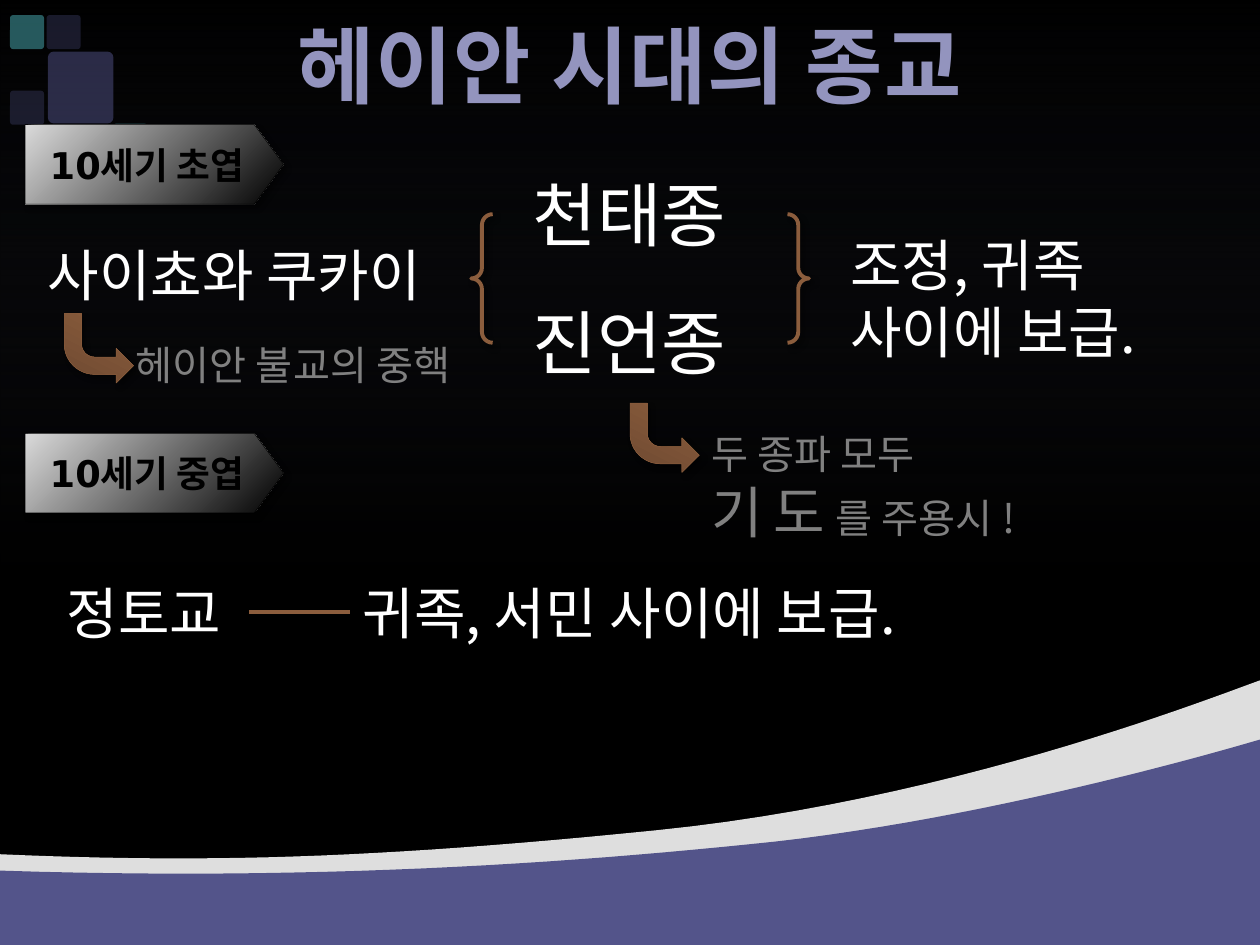
from lxml.etree import SubElement
from pptx import Presentation
from pptx.dml.color import RGBColor
from pptx.enum.shapes import MSO_CONNECTOR, MSO_SHAPE
from pptx.enum.text import MSO_ANCHOR, MSO_AUTO_SIZE, PP_ALIGN
from pptx.oxml.ns import qn
from pptx.util import Inches, Pt

COLORS = {name: RGBColor.from_string(value) for name, value in {
    "black": "000000", "white": "FFFFFF", "gray": "808080", "slate": "424456",
    "silver": "DEDEDE", "light": "DADADA", "indigo": "53548A", "teal": "3F949A",
    "lavender": "9394BE", "brown": "8B5D3D", "dark brown": "6F4A31",
}.items()}
KOREAN_FONT = "Noto Sans CJK KR"


def add_span(para, text, size, color, font=KOREAN_FONT, bold=False, spacing=0):
    span = para.add_run()
    span.text = text
    for name, value in {"size": Pt(size), "bold": bold, "name": font}.items():
        setattr(span.font, name, value)
    span.font.color.rgb = COLORS[color]
    properties = span._r.get_or_add_rPr()
    properties.set("spc", str(int(spacing * 100)))
    SubElement(properties, qn("a:ea"), typeface=KOREAN_FONT)


def add_shadow(shape, opacity):
    """Add a soft shadow; call after fill and line are set."""
    effects = SubElement(shape._element.spPr, qn("a:effectLst"))
    outer = SubElement(effects, qn("a:outerShdw"), blurRad=str(Pt(3)), dist=str(Pt(3)),
                       dir=str(50 * 60000), algn="tl", rotWithShape="0")
    color = SubElement(outer, qn("a:srgbClr"), val="000000")
    SubElement(color, qn("a:alpha"), val=str(opacity * 1000))


deck = Presentation()
deck.slide_width, deck.slide_height = Inches(10), Inches(7.5)
page = deck.slides.add_slide(deck.slide_layouts[5])
page.background.fill.solid()
page.background.fill.fore_color.rgb = COLORS["black"]

# Backdrop glow
glow = page.shapes.add_shape(MSO_SHAPE.RECTANGLE, 0, 0, deck.slide_width, deck.slide_height)
glow.shadow.inherit = False
glow.line.fill.background()
glow.fill.gradient()
glow.fill.gradient_angle = 270
for stop, color, position in zip(glow.fill.gradient_stops, ("slate", "black"), (0, 0.61)):
    stop.color.rgb = COLORS[color]
    stop.position = position
for color, opacity in zip(glow._element.spPr.iter(qn("a:srgbClr")), (0, 40)):
    SubElement(color, qn("a:alpha"), val=str(opacity * 1000))

# Waves: start point, then Bezier segments of two controls and an end point
waves = [
    ("silver", (0, 6.78), [((1.61, 6.85), (2.93, 6.82), (5.21, 6.59)),
                           ((7.49, 6.36), (9.48, 5.59), (10, 5.4))]),
    ("indigo", (0, 6.91), [((2.46, 6.99), (4.45, 6.86), (6.15, 6.68)),
                           ((7.84, 6.49), (9.59, 5.99), (10, 5.87))]),
]
STEPS = 24
for color, start, segments in waves:
    builder = page.shapes.build_freeform(Inches(start[0]), Inches(start[1]))
    points, begin = [], start
    for first, second, end in segments:
        for step in range(1, STEPS + 1):
            t = step / STEPS
            weights = ((1 - t) ** 3, 3 * t * (1 - t) ** 2, 3 * t ** 2 * (1 - t), t ** 3)
            corners = (begin, first, second, end)
            points.append([sum(w * c[axis] for w, c in zip(weights, corners)) for axis in (0, 1)])
        begin = end
    points += [(10, 7.5), (0, 7.5)]
    builder.add_line_segments([(Inches(x), Inches(y)) for x, y in points], close=True)
    wave = builder.convert_to_shape()
    wave.shadow.inherit = False
    wave.fill.solid()
    wave.fill.fore_color.rgb = COLORS[color]
    wave.line.fill.background()

# Corner tiles
tiles = [
    (0.37, 0.12, 0.27, 0.27, "indigo", 30),
    (0.08, 0.72, 0.27, 0.27, "indigo", 30),
    (0.08, 0.12, 0.27, 0.27, "teal", 60),
    (0.9, 0.98, 0.27, 0.27, "teal", 30),
    (0.38, 0.41, 0.52, 0.57, "indigo", 50),
]
for *place, color, opacity in tiles:
    tile = page.shapes.add_shape(MSO_SHAPE.ROUNDED_RECTANGLE, *map(Inches, place))
    tile.adjustments[0] = 0.09
    tile.shadow.inherit = False
    tile.fill.solid()
    tile.fill.fore_color.rgb = COLORS[color]
    tile.line.fill.background()
    tint = next(tile._element.spPr.iter(qn("a:srgbClr")))
    SubElement(tint, qn("a:alpha"), val=str(opacity * 1000))

# Title, brought in front of the backdrop
title = page.shapes.title
for name, value in {"left": 0.51, "top": 0, "width": 8.98, "height": 1.02}.items():
    setattr(title, name, Inches(value))
title.text_frame.auto_size = MSO_AUTO_SIZE.NONE
title.text_frame.vertical_anchor = MSO_ANCHOR.MIDDLE
title_para = title.text_frame.paragraphs[0]
title_para.alignment = PP_ALIGN.CENTER
add_span(title_para, "헤이안 시대의 종교", 48, "lavender", "Cambria", True, 0.5)
title._element.getparent().append(title._element)

braces = page.shapes.add_shape(MSO_SHAPE.DOUBLE_BRACE, Inches(3.74), Inches(1.7),
                               Inches(2.68), Inches(1.02))
braces.fill.background()
braces.line.color.rgb = COLORS["brown"]
braces.line.width = Pt(2.25)
add_shadow(braces, 45)

# Century tags and bent arrows
tag_size, arrow_size = (2.05, 0.63), (0.55, 0.55)
markers = [
    (MSO_SHAPE.PENTAGON, (0.2, 0.99), tag_size, "10세기 초엽"),
    (MSO_SHAPE.PENTAGON, (0.2, 3.44), tag_size, "10세기 중엽"),
    (MSO_SHAPE.BENT_ARROW, (0.51, 2.49), arrow_size, None),
    (MSO_SHAPE.BENT_ARROW, (5, 3.2), arrow_size, None),
]
for kind, position, size, label in markers:
    marker = page.shapes.add_shape(kind, *map(Inches, position + size))
    marker.fill.gradient()
    marker.fill.gradient_angle = 315 if label else 297
    ends = ("light", "black") if label else ("dark brown", "brown")
    for stop, color in zip(marker.fill.gradient_stops, ends):
        stop.color.rgb = COLORS[color]
    marker.line.color.rgb = COLORS[ends[1]]
    marker.line.width = Pt(0.25)
    add_shadow(marker, 43 if label else 45)
    if label:
        marker.adjustments[0] = 0.368
        marker.text_frame.vertical_anchor = MSO_ANCHOR.MIDDLE
        para = marker.text_frame.paragraphs[0]
        para.alignment = PP_ALIGN.CENTER
        add_span(para, label, 21, "black", "DejaVu Sans", True)
    else:
        marker._element.spPr.xfrm.set("flipV", "1")

# Text boxes: place, colour, then lines of (text, size, letter spacing)
notes = [
    ((0.28, 1.86, 3.49, 0.64), "white", [[("사이쵸와 쿠카이", 32, 0)]]),
    ((4.13, 1.31, 1.88, 0.77), "white", [[("천태종", 40, 0)]]),
    ((4.13, 2.33, 1.88, 0.77), "white", [[("진언종", 40, 0)]]),
    ((6.65, 1.78, 2.88, 1.18), "white", [[("조정, 귀족", 32, 0)], [("사이에 보급.", 32, 0)]]),
    ((0.98, 2.65, 3, 0.49), "gray", [[("헤이안 불교의 중핵", 23, 0)]]),
    ((5.55, 3.36, 3, 1.03), "gray", [[("두 종파 모두", 23, 0)],
                                     [("기도", 32, 6), ("를 주용시 !", 23, 0)]]),
    ((0.43, 4.54, 1.55, 0.64), "white", [[("정토교", 32, 0)]]),
    ((2.78, 4.54, 5.13, 0.64), "white", [[("귀족, 서민 사이에 보급.", 32, 0)]]),
]
boxes = []
for place, color, lines in notes:
    box = page.shapes.add_textbox(*map(Inches, place))
    frame = box.text_frame
    frame.word_wrap = False
    frame.auto_size = MSO_AUTO_SIZE.SHAPE_TO_FIT_TEXT
    for index, line in enumerate(lines):
        para = frame.add_paragraph() if index else frame.paragraphs[0]
        for text, size, spacing in line:
            add_span(para, text, size, color, spacing=spacing)
    boxes.append(box)

link = page.shapes.add_connector(MSO_CONNECTOR.STRAIGHT, Inches(1.98), Inches(4.86),
                                 Inches(2.78), Inches(4.86))
link.begin_connect(boxes[-2], 3)
link.end_connect(boxes[-1], 1)
link.line.color.rgb = COLORS["brown"]
link.line.width = Pt(2.25)
add_shadow(link, 45)

deck.save("out.pptx")
